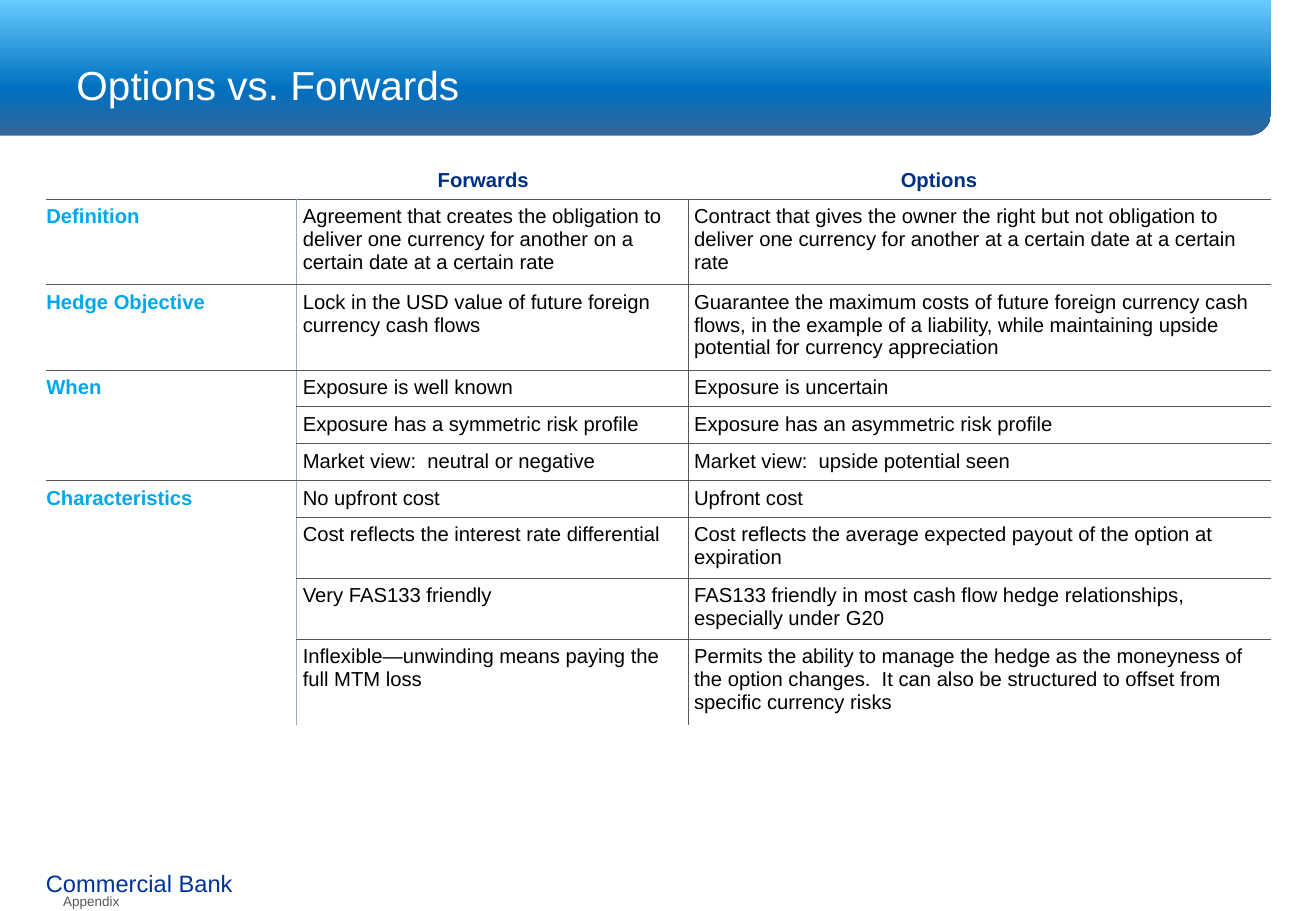
from lxml.etree import SubElement
from pptx import Presentation
from pptx.dml.color import RGBColor
from pptx.enum.shapes import MSO_SHAPE as Shape
from pptx.enum.text import PP_ALIGN as Align
from pptx.oxml.ns import qn
from pptx.util import Cm, Pt

TITLE = "Options vs. Forwards"
BANK = "Commercial Bank"
SECTION = "Appendix"
HEADERS = [("Forwards", 2.95), ("Options", 4.45)]
GROUPS = [
    ("Definition", [
        ("Agreement that creates the obligation to deliver one currency for another on a certain date at a certain rate",
         "Contract that gives the owner the right but not obligation to deliver one currency for another at a certain date at a certain rate", 3),
    ]),
    ("Hedge Objective", [
        ("Lock in the USD value of future foreign currency cash flows",
         "Guarantee the maximum costs of future foreign currency cash flows, in the example of a liability, while maintaining upside potential for currency appreciation", 3),
    ]),
    ("When", [
        ("Exposure is well known", "Exposure is uncertain", 1),
        ("Exposure has a symmetric risk profile", "Exposure has an asymmetric risk profile", 1),
        ("Market view:  neutral or negative", "Market view:  upside potential seen", 1),
    ]),
    ("Characteristics", [
        ("No upfront cost", "Upfront cost", 1),
        ("Cost reflects the interest rate differential",
         "Cost reflects the average expected payout of the option at expiration", 2),
        ("Very FAS133 friendly",
         "FAS133 friendly in most cash flow hedge relationships, especially under G20", 2),
        ("Inflexible—unwinding means paying the full MTM loss",
         "Permits the ability to manage the hedge as the moneyness of the option changes.  It can also be structured to offset from specific currency risks", 3),
    ]),
]
COLUMNS = [5.23, 8.18, 12.19]
HEADER_HEIGHT, ROW_PADDING, LINE_HEIGHT = 0.61, 0.25, 0.51
INSET = 0.13


class Theme:
    font = "Arial"
    title, bank, body, section = 24, 14, 12, 8
    white, black, bank_blue = "FFFFFF", "000000", "003399"
    header_blue, label_blue, grey = "003082", "00A8EB", "53565A"
    banner = [(0, "336699"), (35, "0070C0"), (100, "66CCFF")]
    heavy, thin, label_edge = ("53565A", 1), ("53565A", 0.5), ("99ABC7", 1)


def write(frame, text, size, color, bold=False, align=Align.LEFT):
    paragraph = frame.paragraphs[0]
    paragraph.alignment = align
    run = paragraph.add_run()
    run.text = text
    run.font.name, run.font.size, run.font.bold = Theme.font, Pt(size), bold
    run.font.color.rgb = RGBColor.from_string(color)


def add_text(slide, box, text, size, color, wrap=False, inset=(0.25, 0.13), align=Align.LEFT):
    frame = slide.shapes.add_textbox(*map(Cm, box)).text_frame
    frame.word_wrap = wrap
    frame.margin_left = frame.margin_right = Cm(inset[0])
    frame.margin_top = frame.margin_bottom = Cm(inset[1])
    write(frame, text, size, color, align=align)


def add_banner(slide):
    banner = slide.shapes.add_shape(Shape.ROUND_1_RECTANGLE, 0, 0, Cm(26.57), Cm(2.84))
    banner.shadow.inherit = False
    banner.line.fill.background()
    banner.fill.gradient()
    properties = banner._element.spPr
    properties.find(qn("a:xfrm")).set("flipV", "1")
    gradient = properties.find(qn("a:gradFill"))
    stops = gradient.find(qn("a:gsLst"))
    for stop in list(stops):
        stops.remove(stop)
    for position, color in Theme.banner:
        stop = SubElement(stops, qn("a:gs"), pos=str(position * 1000))
        SubElement(stop, qn("a:srgbClr"), val=color)
    gradient.find(qn("a:lin")).set("ang", "5400000")


def set_borders(cell, edges):
    properties = cell._tc.get_or_add_tcPr()
    for position, (side, edge) in enumerate(zip(("lnL", "lnR", "lnT", "lnB"), edges)):
        color, width = edge or (None, 0)
        line = SubElement(properties, qn(f"a:{side}"), w=str(int(Pt(width))))
        if color:
            fill = SubElement(line, qn("a:solidFill"))
            SubElement(fill, qn("a:srgbClr"), val=color)
        else:
            SubElement(line, qn("a:noFill"))
        properties.insert(position, line)


def fill_cell(cell, text, color, bold, left=INSET, top=INSET):
    cell.margin_left, cell.margin_top = Cm(left), Cm(top)
    cell.margin_right = cell.margin_bottom = Cm(INSET)
    write(cell.text_frame, text, Theme.body, color, bold)


def add_comparison(slide):
    rows = [row for _, group in GROUPS for row in group]
    heights = [HEADER_HEIGHT] + [ROW_PADDING + LINE_HEIGHT * lines for *_, lines in rows]
    table = slide.shapes.add_table(
        len(heights), len(COLUMNS), Cm(0.97), Cm(3.53), Cm(sum(COLUMNS)), Cm(sum(heights))).table
    table.first_row = table.horz_banding = False
    for column, width in zip(table.columns, COLUMNS):
        column.width = Cm(width)
    for row, height in zip(table.rows, heights):
        row.height = Cm(height)

    table.cell(0, 0).text_frame.paragraphs[0].font.size = Pt(Theme.body)
    table.cell(0, 0).margin_top = 0
    for column, (text, left) in enumerate(HEADERS, 1):
        fill_cell(table.cell(0, column), text, Theme.header_blue, True, left, 0)
    for index, (forward, option, _) in enumerate(rows, 1):
        fill_cell(table.cell(index, 1), forward, Theme.black, False)
        fill_cell(table.cell(index, 2), option, Theme.black, False)

    group_starts, start = set(), 1
    for label, group in GROUPS:
        group_starts.add(start)
        cell = table.cell(start, 0)
        fill_cell(cell, label, Theme.label_blue, True, left=0)
        if len(group) > 1:
            cell.merge(table.cell(start + len(group) - 1, 0))
        start += len(group)

    def rule_above(index, column):
        if index in (0, len(heights)):
            return None
        if index == 1:
            return Theme.heavy
        return Theme.thin if column or index in group_starts else None

    verticals = [None, Theme.label_edge, Theme.thin, None]
    for index in range(len(heights)):
        for column in range(len(COLUMNS)):
            cell = table.cell(index, column)
            cell.fill.background()
            sides = verticals[column:column + 2] if index else [None, None]
            set_borders(cell, [*sides, rule_above(index, column), rule_above(index + 1, column)])


def main():
    presentation = Presentation()
    presentation.slide_width, presentation.slide_height = Cm(27.51), Cm(19.05)
    slide = presentation.slides.add_slide(presentation.slide_layouts[6])
    add_banner(slide)
    add_text(slide, (0.69, 18.03, 4.45, 0.86), BANK, Theme.bank, Theme.bank_blue, align=Align.CENTER)
    add_text(slide, (1.35, 1.12, 13.41, 1.27), TITLE, Theme.title, Theme.white, wrap=True)
    add_comparison(slide)
    add_text(slide, (1.32, 18.67, 1.9, 0.33), SECTION, Theme.section, Theme.grey, inset=(0, 0))
    presentation.save("out.pptx")


if __name__ == "__main__":
    main()
